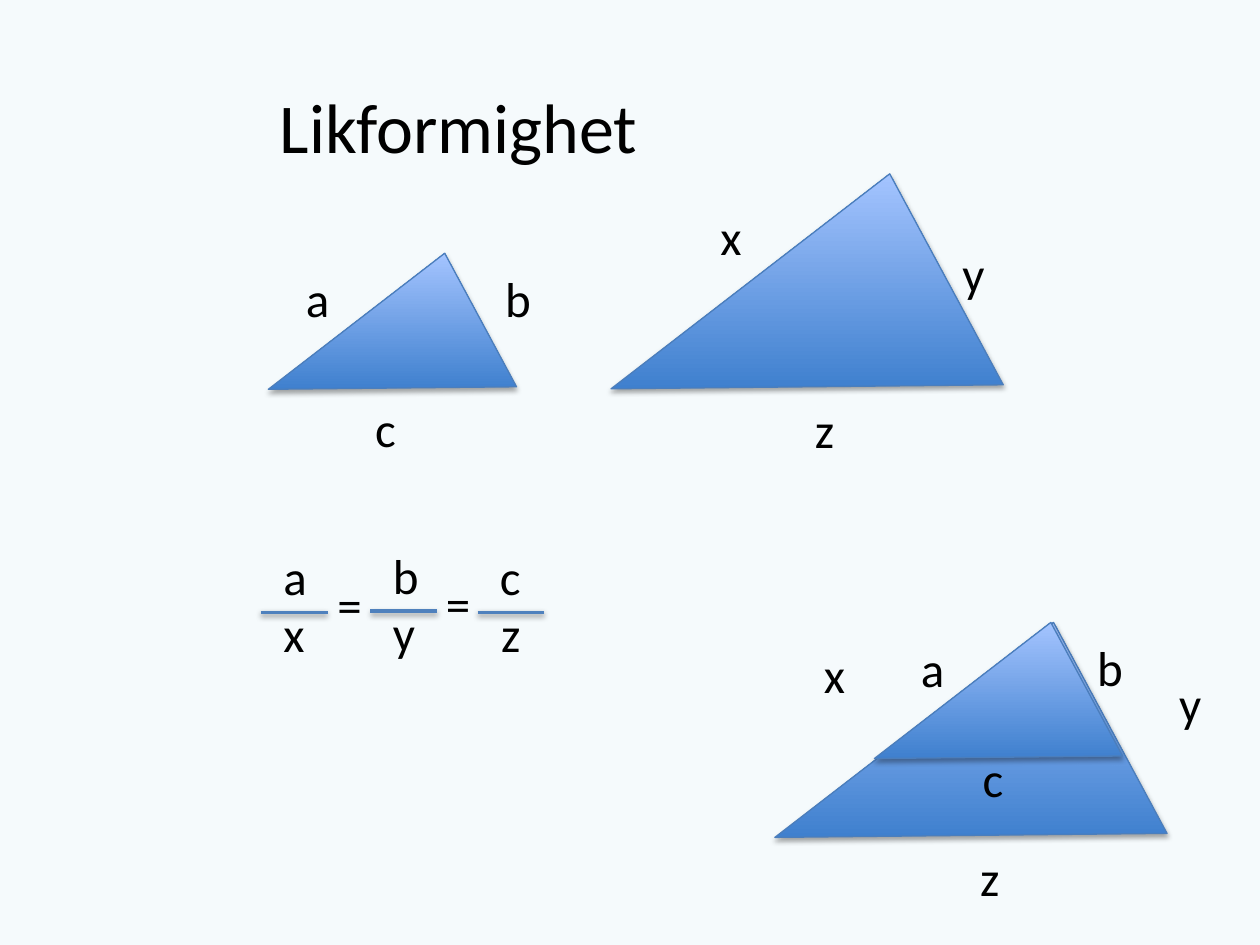
"""Build the slide on similar triangles and their side ratios."""
from lxml import etree
from pptx import Presentation
from pptx.dml.color import RGBColor
from pptx.enum import text
from pptx.oxml import ns
from pptx.util import Inches, Pt

BLACK = RGBColor(0x00, 0x00, 0x00)
BACKGROUND = RGBColor(0xF5, 0xFA, 0xFC)
DEEP_BLUE = RGBColor(0x3F, 0x80, 0xCE)
PALE_BLUE = RGBColor(0xA4, 0xC4, 0xFF)
OUTLINE = RGBColor(0x4B, 0x7E, 0xBC)
BAR_BLUE = RGBColor(0x4F, 0x81, 0xBD)


def add_label(shapes, wording, left, top, width):
    label = shapes.add_textbox(Inches(left), Inches(top), Inches(width), Inches(0.57))
    label.text_frame.word_wrap = False
    label.text_frame.auto_size = text.MSO_AUTO_SIZE.SHAPE_TO_FIT_TEXT
    paragraph = label.text_frame.paragraphs[0]
    paragraph.text = wording
    paragraph.font.name = "Calibri"
    paragraph.font.size = Pt(28)
    paragraph.font.color.rgb = BLACK


def add_shadow(shape, distance, opacity):
    effects = etree.SubElement(shape.element.spPr, ns.qn("a:effectLst"))
    shadow = etree.SubElement(effects, ns.qn("a:outerShdw"), blurRad=str(Pt(3.1)),
                              dist=str(Pt(distance)), dir="5400000", rotWithShape="0")
    color = etree.SubElement(shadow, ns.qn("a:srgbClr"), val=str(BLACK))
    etree.SubElement(color, ns.qn("a:alpha"), val=str(opacity * 1000))


deck = Presentation()
deck.slide_width, deck.slide_height = Inches(10), Inches(7.5)
slide = deck.slides.add_slide(deck.slide_layouts[5])
slide.background.fill.solid()
slide.background.fill.fore_color.rgb = BACKGROUND

title = slide.shapes.title
title.left, title.top = Inches(2.12), Inches(0.61)
title.width, title.height = Inches(3.09), Inches(0.77)
title.text_frame.word_wrap = False
heading = title.text_frame.paragraphs[0]
heading.text = "Likformighet"
heading.alignment = text.PP_ALIGN.LEFT
heading.font.name = "Calibri"
heading.font.size = Pt(40)
heading.font.color.rgb = BLACK

CORNERS = [(0, 1.08), (1.97, 1.06), (1.4, 0)]
SMALL, LARGE = 1, 1.58
triangles = [
    (True, 2.13, 2.01, SMALL,
     [("a", 2.33, 2.08, 0.39), ("b", 3.91, 2.08, 0.41), ("c", 2.88, 3.11, 0.37)]),
    (True, 4.85, 1.38, LARGE,
     [("x", 5.62, 1.59, 0.37), ("y", 7.54, 1.88, 0.39), ("z", 6.37, 3.12, 0.36)]),
    (False, 6.15, 4.94, LARGE,
     [("x", 6.44, 5.07, 0.37), ("y", 9.26, 5.3, 0.39), ("z", 7.68, 6.68, 0.36)]),
    (False, 6.94, 4.94, SMALL,
     [("a", 7.21, 5.02, 0.39), ("b", 8.61, 5.01, 0.41), ("c", 7.7, 5.89, 0.37)]),
]
for grouped, left, top, scale, sides in triangles:
    shapes = slide.shapes.add_group_shape().shapes if grouped else slide.shapes
    points = [(Inches(left + x * scale), Inches(top + y * scale)) for x, y in CORNERS]
    outline = shapes.build_freeform(*points[0])
    outline.add_line_segments(points[1:], close=True)
    triangle = outline.convert_to_shape()
    triangle.fill.gradient()
    triangle.fill.gradient_angle = 90
    for stop, color, position in zip(triangle.fill.gradient_stops,
                                     (DEEP_BLUE, PALE_BLUE), (0, 1)):
        stop.color.rgb = color
        stop.position = position
    triangle.line.color.rgb = OUTLINE
    triangle.line.width = Pt(0.75)
    add_shadow(triangle, 1.8, 35)
    for side in sides:
        add_label(shapes, *side)

ratios = slide.shapes.add_group_shape().shapes
fractions = [("a", 2.15, 0.39, "x", 2.15, 0.37, 2.07, 4.86),
             ("b", 3.02, 0.41, "y", 3.02, 0.38, 2.94, 4.85),
             ("c", 3.87, 0.37, "z", 3.88, 0.36, 3.79, 4.86)]
for over, over_left, over_width, under, under_left, under_width, left, level in fractions:
    add_label(ratios, over, over_left, level - 0.57, over_width)
    add_label(ratios, under, under_left, level - 0.12, under_width)
    bar = ratios.add_connector(1, Inches(left), Inches(level),
                               Inches(left + 0.53), Inches(level))
    bar.line.color.rgb = BAR_BLUE
    bar.line.width = Pt(2)
    add_shadow(bar, 1.6, 38)
for left, top in [(2.58, 4.51), (3.44, 4.5)]:
    add_label(ratios, "=", left, top, 0.4)

deck.save("out.pptx")
